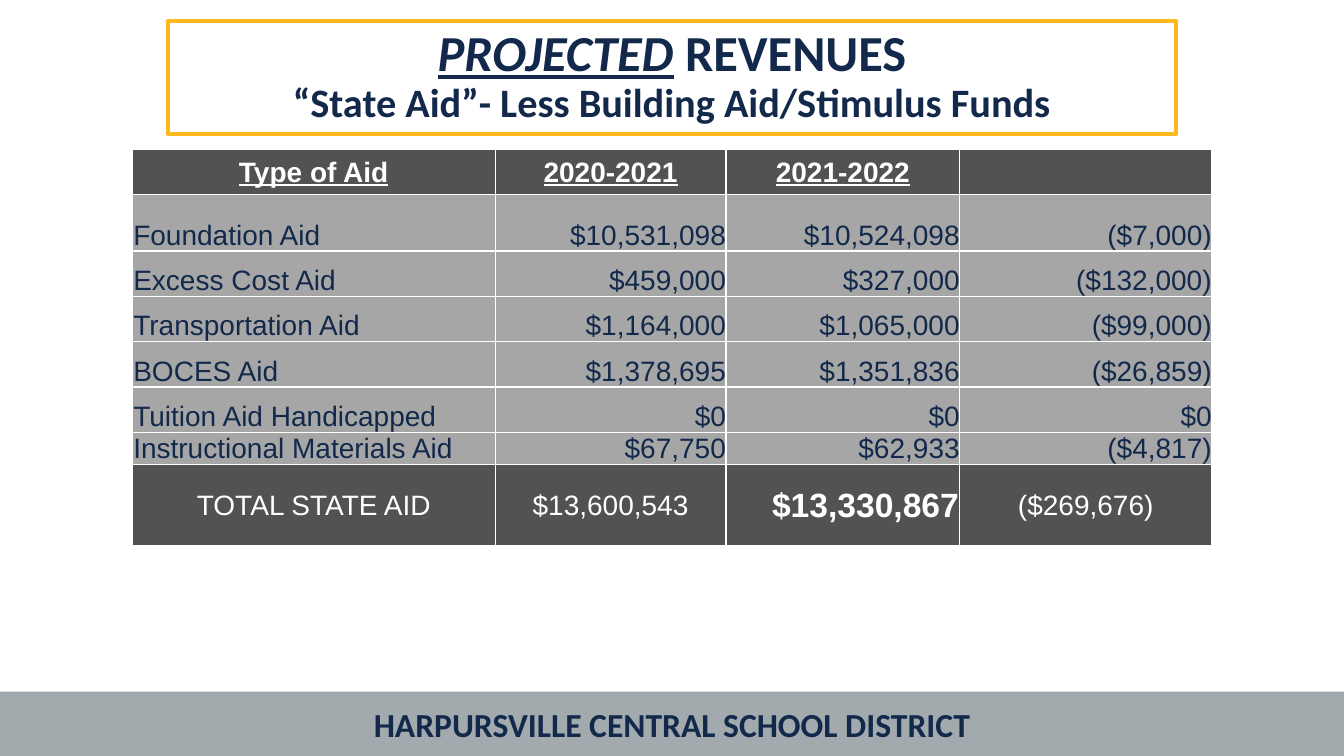
from copy import deepcopy

from pptx import Presentation
from pptx.dml.color import RGBColor
from pptx.enum.shapes import MSO_SHAPE
from pptx.enum.text import MSO_ANCHOR, MSO_AUTO_SIZE, PP_ALIGN
from pptx.oxml import parse_xml
from pptx.oxml.ns import nsdecls
from pptx.util import Pt

RECT = MSO_SHAPE.RECTANGLE
MIDDLE, BOTTOM = MSO_ANCHOR.MIDDLE, MSO_ANCHOR.BOTTOM
LEFT, CENTER, RIGHT = PP_ALIGN.LEFT, PP_ALIGN.CENTER, PP_ALIGN.RIGHT
FIXED = MSO_AUTO_SIZE.NONE

COLORS = {"navy": "13294B", "gold": "FFB81C", "silver": "A2AAAD",
          "dark": "525252", "gray": "A6A6A6", "white": "FFFFFF"}
WIDE, HIGH = 960, 540
COLS = [259.2, 164.9, 167, 180]
ROWS = [32.4, 40.3, 32.4, 32.4, 32.4, 32.4, 23, 57.6]

HEADS = ["Type of Aid", "2020-2021", "2021-2022", ""]
AIDS = [
    ["Foundation Aid", "$10,531,098", "$10,524,098", "($7,000)"],
    ["Excess Cost Aid", "$459,000", "$327,000", "($132,000)"],
    ["Transportation Aid", "$1,164,000", "$1,065,000", "($99,000)"],
    ["BOCES Aid", "$1,378,695", "$1,351,836", "($26,859)"],
    ["Tuition Aid Handicapped", "$0", "$0", "$0"],
    ["Instructional Materials Aid", "$67,750", "$62,933", "($4,817)"],
]
TOTALS = ["TOTAL STATE AID", "$13,600,543", "$13,330,867", "($269,676)"]

HEAD = {"name": "Arial", "size": Pt(20), "bold": True, "underline": True}
PLAIN = {"name": "Arial", "size": Pt(20), "bold": False}
STRONG = {"name": "Arial", "size": Pt(24), "bold": True}
TITLE = {"name": "Calibri", "size": Pt(36), "bold": True}
STRESS = {**TITLE, "italic": True, "underline": True}
SUB = {**TITLE, "size": Pt(28.8)}
FOOT = {**TITLE, "size": Pt(24)}


class Page:
    """Holds the style and the current slide, and draws each kind of element."""

    def __init__(self, deck):
        self.slide = deck.slides.add_slide(deck.slide_layouts[5])

    def color(self, name):
        return RGBColor.from_string(COLORS[name])

    def paint(self, fill, name):
        fill.solid()
        fill.fore_color.rgb = self.color(name)

    def label(self, para, text, style, name="navy"):
        run = para.add_run()
        run.text = text
        for key, value in style.items():
            setattr(run.font, key, value)
        run.font.color.rgb = self.color(name)
        return run

    def title(self, left, top, width, height, lines):
        box = self.slide.shapes.title
        spot = {"left": left, "top": top, "width": width, "height": height}
        for key, value in spot.items():
            setattr(box, key, Pt(value))
        box.line.color.rgb = self.color("gold")
        box.line.width = Pt(3)
        frame = box.text_frame
        frame.word_wrap = True
        frame.auto_size = FIXED
        frame.vertical_anchor = MIDDLE
        para = frame.paragraphs[0]
        para.alignment = CENTER
        para.line_spacing = 0.9
        for place, line in enumerate(lines):
            if place:
                para.add_line_break()
                para._p[-1].append(deepcopy(run._r.rPr))
            for text, style in line:
                run = self.label(para, text, style)

    def band(self, left, top, width, height, text):
        bar = self.slide.shapes.add_shape(
            RECT, Pt(left), Pt(top), Pt(width), Pt(height))
        bar.shadow.inherit = False
        self.paint(bar.fill, "silver")
        bar.line.fill.background()
        bar.text_frame.vertical_anchor = MIDDLE
        para = bar.text_frame.paragraphs[0]
        para.alignment = CENTER
        self.label(para, text, FOOT)

    def table(self, left, top, cols, rows):
        grid = self.slide.shapes.add_table(
            len(rows), len(cols), Pt(left), Pt(top),
            Pt(sum(cols)), Pt(sum(rows))).table
        for col, width in zip(grid.columns, cols):
            col.width = Pt(width)
        for row, height in zip(grid.rows, rows):
            row.height = Pt(height)
        return grid

    def cell(self, cell, text, fill, ink, style, align, anchor):
        for side in "LRTB":
            cell._tc.get_or_add_tcPr().append(parse_xml(
                f'<a:ln{side} {nsdecls("a")} w="{Pt(1)}"><a:solidFill>'
                f'<a:srgbClr val="{COLORS["white"]}"/></a:solidFill></a:ln{side}>'))
        self.paint(cell.fill, fill)
        edge = Pt(0 if align == RIGHT and anchor == BOTTOM else 0.7)
        form = {"margin_left": edge, "margin_right": edge, "margin_top": edge,
                "margin_bottom": 0, "vertical_anchor": anchor}
        for key, value in form.items():
            setattr(cell, key, value)
        para = cell.text_frame.paragraphs[0]
        para.alignment = align
        if text:
            self.label(para, text, style, ink)


def main():
    deck = Presentation()
    deck.slide_width, deck.slide_height = Pt(WIDE), Pt(HIGH)
    page = Page(deck)
    page.band(0, 494, WIDE, 46, "HARPURSVILLE CENTRAL SCHOOL DISTRICT")
    page.title(120, 15, 720, 80.6, [
        [("PROJECTED", STRESS), (" REVENUES", TITLE)],
        [("“State Aid”- Less Building Aid/Stimulus Funds", SUB)]])
    grid = page.table(94.5, 106.6, COLS, ROWS)
    for col, text in enumerate(HEADS):
        page.cell(grid.cell(0, col), text, "dark", "white", HEAD, CENTER, MIDDLE)
    for row, aid in enumerate(AIDS, 1):
        for col, text in enumerate(aid):
            page.cell(grid.cell(row, col), text, "gray", "navy", PLAIN,
                      RIGHT if col else LEFT, BOTTOM)
    for col, text in enumerate(TOTALS):
        style, align = (STRONG, RIGHT) if col == 2 else (PLAIN, CENTER)
        page.cell(grid.cell(len(ROWS) - 1, col), text, "dark", "white",
                  style, align, MIDDLE)
    deck.save("out.pptx")


if __name__ == "__main__":
    main()
